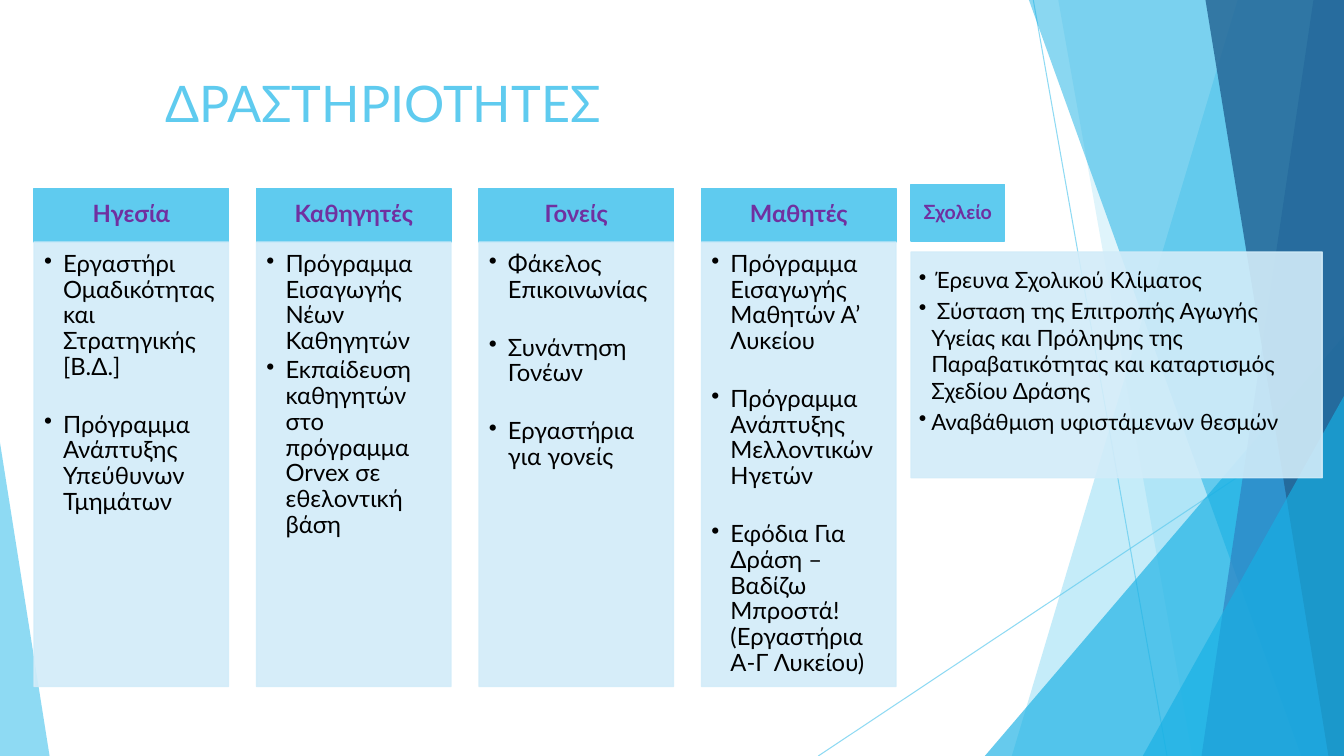
from dataclasses import dataclass

from lxml.etree import SubElement
from pptx import Presentation
from pptx.dml.color import RGBColor
from pptx.enum.shapes import MSO_CONNECTOR, MSO_SHAPE
from pptx.enum.text import MSO_ANCHOR, MSO_AUTO_SIZE, PP_ALIGN
from pptx.oxml.ns import qn
from pptx.util import Cm, Pt


@dataclass(frozen=True)
class Theme:
    font: str = "Lato"
    sky: str = "5FCBEF"
    cyan: str = "17B0E4"
    blue: str = "2E83C3"
    navy: str = "226292"
    pale: str = "D2ECF9"
    purple: str = "7030A0"
    black: str = "000000"
    title_size: int = 36
    column_size: int = 17
    school_size: int = 16
    school_header_size: int = 14


THEME = Theme()
WIDTH, HEIGHT = 33.87, 19.05

AUDIENCES = [
    ("Ηγεσία", 23, [
        "Εργαστήρι Ομαδικότητας και Στρατηγικής [Β.Δ.]",
        "Πρόγραμμα Ανάπτυξης Υπεύθυνων Τμημάτων",
    ]),
    ("Καθηγητές", 2.5, [
        "Πρόγραμμα Εισαγωγής Νέων Καθηγητών",
        "Εκπαίδευση καθηγητών στο πρόγραμμα Orvex σε εθελοντική βάση",
    ]),
    ("Γονείς", 23, [
        "Φάκελος Επικοινωνίας",
        "Συνάντηση Γονέων",
        "Εργαστήρια για γονείς",
    ]),
    ("Μαθητές", 23, [
        "Πρόγραμμα Εισαγωγής Μαθητών Α’ Λυκείου",
        "Πρόγραμμα Ανάπτυξης Μελλοντικών Ηγετών",
        "Εφόδια Για Δράση – Βαδίζω Μπροστά! (Εργαστήρια Α-Γ Λυκείου)",
    ]),
]
SCHOOL_ACTIVITIES = [
    " Έρευνα Σχολικού Κλίματος",
    " Σύσταση της Επιτροπής Αγωγής Υγείας και Πρόληψης της Παραβατικότητας "
    "και καταρτισμός Σχεδίου Δράσης",
    "Αναβάθμιση υφιστάμενων θεσμών",
]


def paint(fill, color, opacity=100):
    fill.solid()
    fill.fore_color.rgb = RGBColor.from_string(color)
    if opacity < 100:
        tint = fill._xPr.find(qn("a:solidFill"))[0]
        SubElement(tint, qn("a:alpha"), val=str(opacity * 1000))


def style_font(font, size, color, bold=False):
    font.name = THEME.font
    font.size = Pt(size)
    font.bold = bold
    font.color.rgb = RGBColor.from_string(color)


def set_insets(frame, left, top, right, bottom):
    frame.margin_left, frame.margin_top = Cm(left), Cm(top)
    frame.margin_right, frame.margin_bottom = Cm(right), Cm(bottom)


def add_panel(slide, box, color, opacity=100):
    panel = slide.shapes.add_shape(MSO_SHAPE.RECTANGLE, *map(Cm, box))
    panel.shadow.inherit = False
    paint(panel.fill, color, opacity)
    panel.line.width = Pt(1)
    paint(panel.line.fill, color, opacity)
    panel.text_frame.word_wrap = True
    return panel.text_frame


def add_header(slide, box, label, size):
    frame = add_panel(slide, box, THEME.sky)
    frame.vertical_anchor = MSO_ANCHOR.MIDDLE
    set_insets(frame, 0.28, 0.15, 0.28, 0.15)
    heading = frame.paragraphs[0]
    heading.text = label
    heading.alignment = PP_ALIGN.CENTER
    heading.line_spacing = 0.9
    style_font(heading.font, size, THEME.purple, bold=True)


def add_activities(slide, box, activities, size, insets, indent, gap, spacings):
    frame = add_panel(slide, box, THEME.pale, 90)
    frame.vertical_anchor = MSO_ANCHOR.TOP
    set_insets(frame, *insets)
    for index, (activity, spacing) in enumerate(zip(activities, spacings)):
        item = frame.add_paragraph() if index else frame.paragraphs[0]
        item.text = activity
        item.alignment = PP_ALIGN.LEFT
        item.line_spacing = spacing
        if index:
            item.space_before = Pt(gap)
        properties = item._p.get_or_add_pPr()
        properties.set("marL", str(Cm(indent)))
        properties.set("indent", str(-Cm(indent)))
        SubElement(properties, qn("a:buChar"), char="•")
        style_font(item.font, size, THEME.black)


def add_ray(slide, start, end):
    ray = slide.shapes.add_connector(
        MSO_CONNECTOR.STRAIGHT, *map(Cm, start + end))
    ray.line.width = Pt(0.75)
    paint(ray.line.fill, THEME.sky, 70)
    SubElement(ray._element.spPr, qn("a:effectLst"))


def add_wedge(slide, top_x, bottom_x, color, opacity):
    outline = slide.shapes.build_freeform(Cm(top_x), 0)
    outline.add_line_segments([
        (Cm(WIDTH), 0), (Cm(WIDTH), Cm(HEIGHT)), (Cm(bottom_x), Cm(HEIGHT))])
    finish_facet(outline.convert_to_shape(), color, opacity)


def add_peak(slide, box, apex, color, opacity):
    peak = slide.shapes.add_shape(MSO_SHAPE.ISOSCELES_TRIANGLE, *map(Cm, box))
    peak.adjustments[0] = apex
    finish_facet(peak, color, opacity)


def finish_facet(facet, color, opacity):
    facet.shadow.inherit = False
    facet.line.fill.background()
    paint(facet.fill, color, opacity)


def add_backdrop(slide):
    add_ray(slide, (26.04, 0), (29.41, HEIGHT))
    add_ray(slide, (WIDTH, 10.24), (20.62, HEIGHT))
    add_wedge(slide, 31.19, 25.5, THEME.sky, 36)
    add_wedge(slide, 26.67, 30.05, THEME.sky, 20)
    add_peak(slide, (24.82, 8.46, 9.05, 10.59), 1, THEME.cyan, 66)
    add_wedge(slide, 25.93, 32.79, THEME.cyan, 50)
    add_wedge(slide, 33.1, 30.28, THEME.blue, 70)
    add_wedge(slide, 30.38, 33.48, THEME.navy, 80)
    add_peak(slide, (28.8, 9.98, 5.07, 9.07), 1, THEME.cyan, 66)
    add_peak(slide, (0, 11.15, 1.25, 7.9), 0, THEME.sky, 70)


def add_title(slide, box):
    title = slide.shapes.title
    title.left, title.top, title.width, title.height = map(Cm, box)
    slide.shapes._spTree.append(title._element)
    frame = title.text_frame
    frame.auto_size = MSO_AUTO_SIZE.NONE
    frame.vertical_anchor = MSO_ANCHOR.TOP
    heading = frame.paragraphs[0]
    heading.text = "ΔΡΑΣΤΗΡΙΟΤΗΤΕΣ"
    heading.alignment = PP_ALIGN.LEFT
    style_font(heading.font, THEME.title_size, THEME.sky)


def add_audiences(slide, box):
    left, top, width, height = box
    column_width, header_height = 4.9, 1.35
    pitch = (width - column_width) / (len(AUDIENCES) - 1)
    for index, (audience, gap, activities) in enumerate(AUDIENCES):
        x = left + index * pitch
        add_header(slide, (x, top, column_width, header_height),
                   audience, THEME.column_size)
        add_activities(
            slide, (x, top + header_height, column_width, height - header_height),
            activities, THEME.column_size, (0.25, 0.25, 0.33, 0.38), 0.48, gap,
            [0.9] * len(activities))


def add_school(slide, box):
    left, top, width, height = box
    list_offset = 1.7
    add_activities(
        slide, (left, top + list_offset, width, height - list_offset),
        SCHOOL_ACTIVITIES, THEME.school_size, (0.2, 0.03, 0.28, 0.3), 0.31, 2.4,
        [1.5, 1, 1])
    add_header(slide, (left, top, 2.36, 1.42), "Σχολείο", THEME.school_header_size)


def main():
    deck = Presentation()
    deck.slide_width, deck.slide_height = Cm(WIDTH), Cm(HEIGHT)
    slide = deck.slides.add_slide(deck.slide_layouts.get_by_name("Title Only"))
    add_backdrop(slide)
    add_title(slide, (3.91, 1.7, 26.26, 2.92))
    add_audiences(slide, (0.86, 4.75, 21.72, 12.55))
    add_school(slide, (22.96, 4.65, 10.36, 7.39))
    deck.save("out.pptx")


if __name__ == "__main__":
    main()
